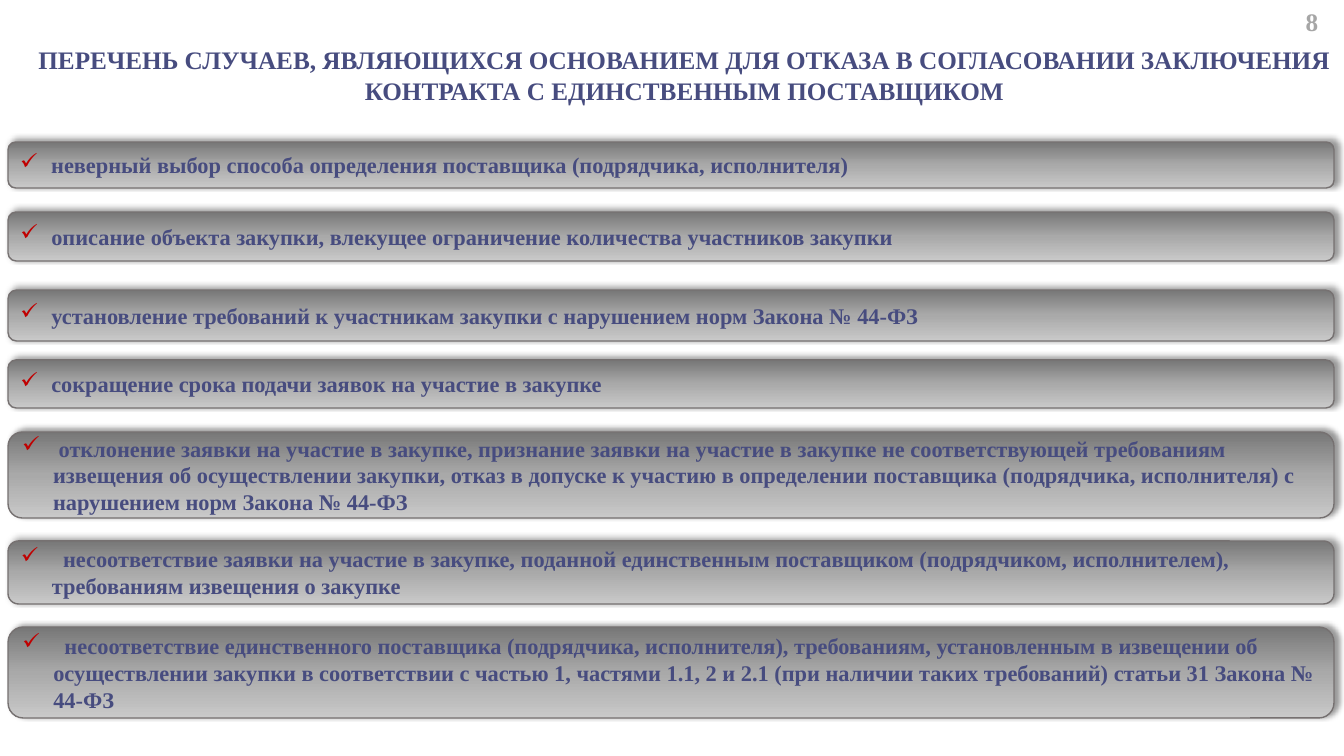
from dataclasses import dataclass

from lxml.etree import SubElement
from pptx import Presentation
from pptx.dml.color import RGBColor as RGB
from pptx.enum.shapes import MSO_SHAPE as Shape
from pptx.enum.text import MSO_ANCHOR as Anchor, MSO_AUTO_SIZE as AutoSize, PP_ALIGN as Align
from pptx.oxml.ns import qn
from pptx.util import Emu, Pt

SLIDE_WIDTH, SLIDE_HEIGHT = 1344, 756
TITLE_ONLY = 5
BAR_LEFT, BAR_WIDTH = 8, 1326
BULLET_INDENT = 31


def px(count):
    return Emu(round(count * 914400 / 100.8))


@dataclass(frozen=True)
class Theme:
    font: str = "Times New Roman"
    ink: str = "474C7F"
    page: str = "A6A6A6"
    check: str = "C00000"
    outline: str = "767171"
    shadow: str = "000000"
    gradient: tuple = ((0, "777777"), (50, "A9A9A9"), (100, "C9C9C9"))
    heading_size: int = 18
    body_size: int = 16


class SlideBuilder:
    def __init__(self, slide, theme):
        self.slide = slide
        self.theme = theme

    def set_text(self, shape, text, size, color, align):
        frame = shape.text_frame
        frame.word_wrap = True
        frame.auto_size = AutoSize.NONE
        frame.vertical_anchor = Anchor.MIDDLE
        frame.text = text
        paragraph = frame.paragraphs[0]
        paragraph.alignment = align
        font = paragraph.font
        font.name, font.size, font.bold = self.theme.font, Pt(size), True
        font.color.rgb = RGB.from_string(color)
        return paragraph

    def title(self, left, top, width, height, text):
        heading = self.slide.shapes.title
        heading.left, heading.top = px(left), px(top)
        heading.width, heading.height = px(width), px(height)
        self.set_text(heading, text, self.theme.heading_size, self.theme.ink, Align.CENTER)

    def page_number(self, left, top, width, height, text):
        number = self.slide.shapes.add_textbox(px(left), px(top), px(width), px(height))
        self.set_text(number, text, self.theme.heading_size, self.theme.page, Align.CENTER)

    def bar(self, top, height, text):
        bar = self.slide.shapes.add_shape(
            Shape.ROUNDED_RECTANGLE, px(BAR_LEFT), px(top), px(BAR_WIDTH), px(height))
        bar.line.color.rgb = RGB.from_string(self.theme.outline)
        bar.line.width = Pt(1)
        self.shade(bar)
        self.cast_shadow(bar)
        reason = self.set_text(bar, text, self.theme.body_size, self.theme.ink, Align.LEFT)
        self.check_mark(reason)

    def shade(self, bar):
        bar.fill.gradient()
        bar.fill.gradient_angle = 270
        stops = bar._element.spPr.find(".//" + qn("a:gsLst"))
        stops.clear()
        for position, color in self.theme.gradient:
            stop = SubElement(stops, qn("a:gs"), pos=str(position * 1000))
            SubElement(stop, qn("a:srgbClr"), val=color)

    def cast_shadow(self, bar):
        bar.shadow.inherit = False
        effects = bar._element.spPr.find(qn("a:effectLst"))
        outer = SubElement(effects, qn("a:outerShdw"), blurRad=str(Pt(4)), dist=str(Pt(3)),
                           dir=str(315 * 60000), algn="bl", rotWithShape="0")
        tint = SubElement(outer, qn("a:srgbClr"), val=self.theme.shadow)
        SubElement(tint, qn("a:alpha"), val="40000")

    def check_mark(self, paragraph):
        properties = paragraph._p.get_or_add_pPr()
        properties.set("marL", str(px(BULLET_INDENT)))
        properties.set("indent", str(-px(BULLET_INDENT)))
        color = properties.makeelement(qn("a:buClr"))
        SubElement(color, qn("a:srgbClr"), val=self.theme.check)
        mark = properties.makeelement(qn("a:buChar"), char="✓")
        # Bullet settings come before the default run properties
        properties.insert(0, color)
        properties.insert(1, mark)


# Top, height and wording of each ground for refusal
REASONS = [
    (142, 46, "неверный выбор способа определения поставщика (подрядчика, исполнителя)"),
    (212, 49, "описание объекта закупки, влекущее ограничение количества участников закупки"),
    (290, 51, "установление требований к участникам закупки с нарушением норм Закона № 44-ФЗ"),
    (360, 48, "сокращение срока подачи заявок на участие в закупке"),
    (432, 86, " отклонение заявки на участие в закупке, признание заявки на участие в закупке "
              "не соответствующей требованиям извещения об осуществлении закупки, отказ в допуске "
              "к участию в определении поставщика (подрядчика, исполнителя) с нарушением норм "
              "Закона № 44-ФЗ"),
    (541, 63, "  несоответствие заявки на участие в закупке, поданной единственным поставщиком "
              "(подрядчиком, исполнителем), требованиям извещения о закупке"),
    (627, 91, "  несоответствие единственного поставщика (подрядчика, исполнителя), требованиям, "
              "установленным в извещении об осуществлении закупки в соответствии с частью 1, "
              "частями 1.1, 2 и 2.1 (при наличии таких требований) статьи 31 Закона № 44-ФЗ"),
]


def main():
    deck = Presentation()
    deck.slide_width, deck.slide_height = px(SLIDE_WIDTH), px(SLIDE_HEIGHT)
    builder = SlideBuilder(deck.slides.add_slide(deck.slide_layouts[TITLE_ONLY]), Theme())

    # Heading
    builder.title(0, 48, 1369, 54,
                  "ПЕРЕЧЕНЬ СЛУЧАЕВ, ЯВЛЯЮЩИХСЯ ОСНОВАНИЕМ ДЛЯ ОТКАЗА В СОГЛАСОВАНИИ "
                  "ЗАКЛЮЧЕНИЯ КОНТРАКТА С ЕДИНСТВЕННЫМ ПОСТАВЩИКОМ")

    # Grounds for refusal
    for top, height, text in REASONS:
        builder.bar(top, height, text)

    # Page number
    builder.page_number(1232, -6, 160, 54, "8")

    deck.save("out.pptx")


if __name__ == "__main__":
    main()
